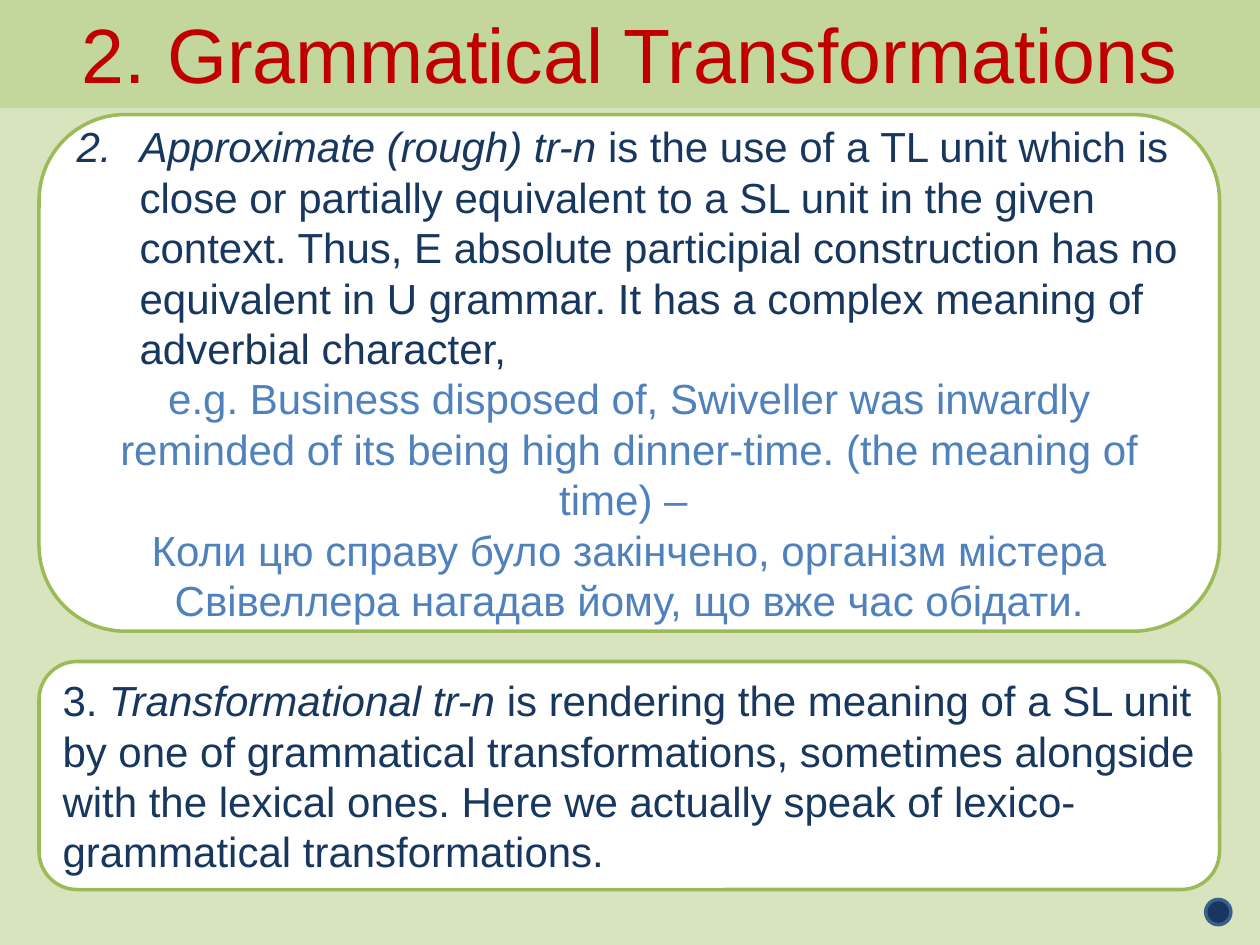
from lxml import etree
from pptx import Presentation
from pptx import util as u
from pptx.dml.color import RGBColor
from pptx.enum import shapes, text
from pptx.oxml import ns

COLORS = {
    "background": "D7E4BD",
    "band": "C3D69B",
    "title": "C00000",
    "card": "FFFFFF",
    "border": "9BBB59",
    "body": "17375E",
    "example": "4F81BD",
    "dot_line": "3A5F8C",
}
CARD_LEFT, CARD_WIDTH = 22.3, 674.6
LEFT, CENTER = text.PP_ALIGN.LEFT, text.PP_ALIGN.CENTER


class SlideBuilder:
    font_name = "Arial"
    title_size = 44
    body_size = 24
    line_width = 2

    def __init__(self, deck):
        self.slide = deck.slides.add_slide(deck.slide_layouts[5])
        fill = self.slide.background.fill
        fill.solid()
        fill.fore_color.rgb = self.color("background")

    def color(self, name):
        return RGBColor.from_string(COLORS[name])

    def paint(self, shape, fill, line):
        shape.fill.solid()
        shape.fill.fore_color.rgb = self.color(fill)
        shape.line.color.rgb = self.color(line)
        shape.line.width = u.Pt(self.line_width)

    def style(self, para, size, color, align):
        para.alignment = align
        para.font.name = self.font_name
        para.font.size = u.Pt(size)
        para.font.color.rgb = self.color(color)

    def number(self, para, start, indent):
        properties = para._p.get_or_add_pPr()
        properties.set("marL", str(u.Pt(indent)))
        properties.set("indent", str(-u.Pt(indent)))
        bullet = etree.Element(ns.qn("a:buAutoNum"), type="arabicPeriod", startAt=str(start))
        properties.insert(0, bullet)

    def title(self, wording, width, height):
        box = self.slide.shapes.title
        box.left, box.top = u.Pt(0), u.Pt(0)
        box.width, box.height = u.Pt(width), u.Pt(height)
        self.paint(box, "band", "band")
        frame = box.text_frame
        frame.text = wording
        frame.auto_size = text.MSO_AUTO_SIZE.NONE
        frame.vertical_anchor = text.MSO_ANCHOR.MIDDLE
        self.style(frame.paragraphs[0], self.title_size, "title", CENTER)

    def shape(self, kind, left, top, width, height, fill, line):
        shape = self.slide.shapes.add_shape(
            kind, u.Pt(left), u.Pt(top), u.Pt(width), u.Pt(height)
        )
        shape.shadow.inherit = False
        self.paint(shape, fill, line)
        return shape

    def card(self, top, height, content):
        box = self.shape(
            shapes.MSO_SHAPE.ROUNDED_RECTANGLE,
            CARD_LEFT, top, CARD_WIDTH, height, "card", "border",
        )
        frame = box.text_frame
        frame.word_wrap = True
        frame.vertical_anchor = text.MSO_ANCHOR.MIDDLE
        for index, (spans, color, align, start) in enumerate(content):
            para = frame.paragraphs[0] if index == 0 else frame.add_paragraph()
            self.style(para, self.body_size, color, align)
            if start:
                self.number(para, start, 36)
            for wording, italic in spans:
                span = para.add_run()
                span.text = wording
                span.font.italic = italic

    def dot(self, left, top, size):
        self.shape(shapes.MSO_SHAPE.OVAL, left, top, size, size, "body", "dot_line")


APPROXIMATE = [
    ([("Approximate (rough) tr-n ", True),
      ("is the use of a TL unit which is close or partially equivalent to a SL unit "
       "in the given context. Thus, E absolute participial construction has no "
       "equivalent in U grammar. It has a complex meaning of adverbial character,", False)],
     "body", LEFT, 2),
    ([("e.g. Business disposed of, Swiveller was inwardly reminded of its being high "
       "dinner-time. (the meaning of time) – ", False)],
     "example", CENTER, None),
    ([("Коли цю справу було закінчено, організм містера Свівеллера нагадав йому, "
       "що вже час обідати.", False)],
     "example", CENTER, None),
]
TRANSFORMATIONAL = [
    ([("3. ", False),
      ("Transformational tr-n ", True),
      ("is rendering the meaning of a SL unit by one of grammatical transformations, "
       "sometimes alongside with the lexical ones. Here we actually speak of "
       "lexico-grammatical transformations.", False)],
     "body", LEFT, None),
]


def main():
    deck = Presentation()
    deck.slide_width, deck.slide_height = u.Pt(720), u.Pt(540)
    page = SlideBuilder(deck)
    page.title("2. Grammatical Transformations", 720, 60.5)
    page.dot(689, 514, 14.4)
    page.card(65.5, 295.2, APPROXIMATE)
    page.card(378, 130.3, TRANSFORMATIONAL)
    deck.save("out.pptx")


if __name__ == "__main__":
    main()
